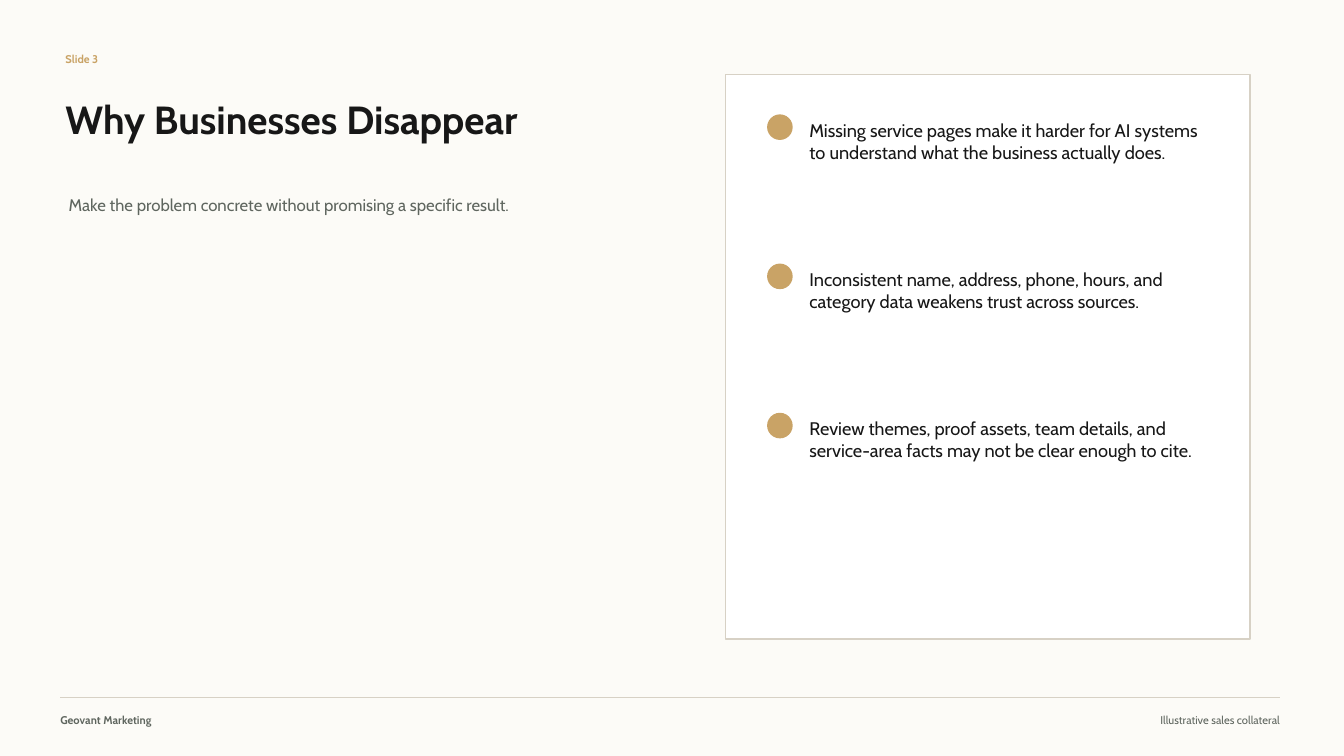
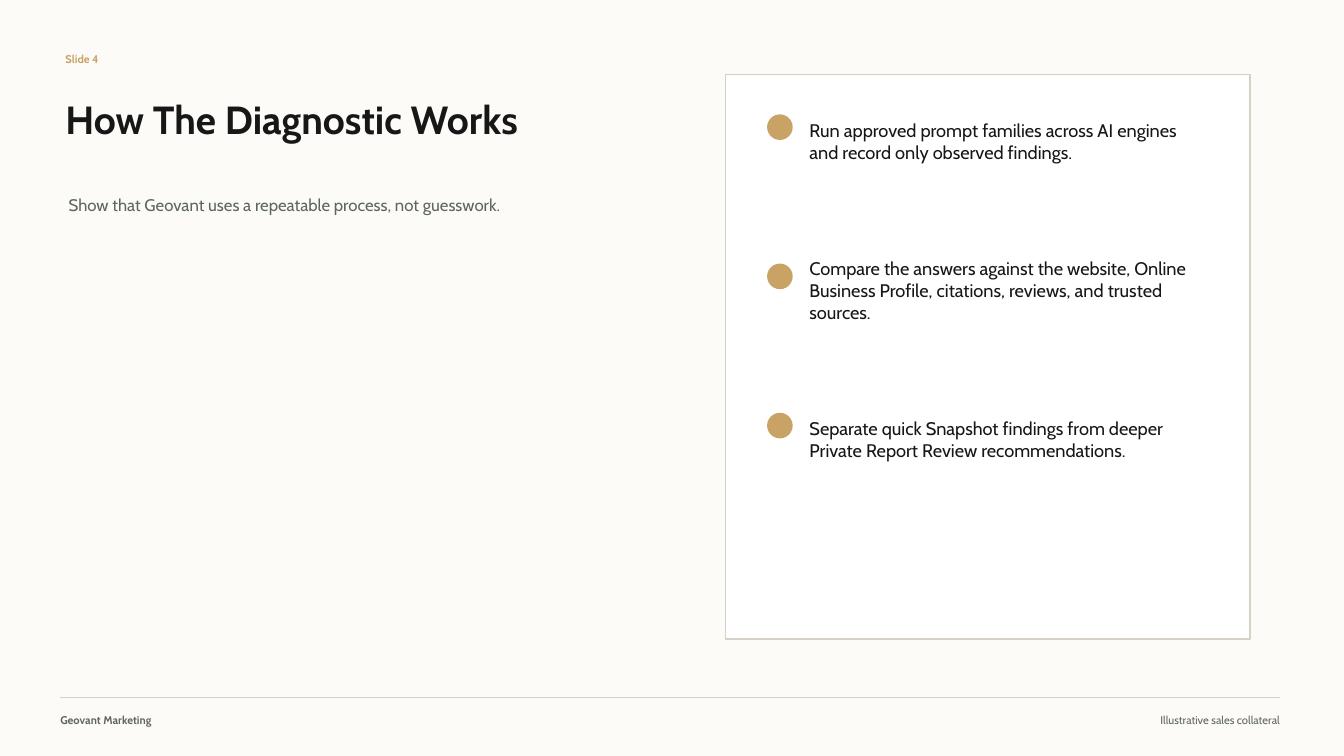
from dataclasses import dataclass
from typing import NamedTuple

from lxml import etree
from pptx import Presentation, util as u
from pptx.dml.color import RGBColor
from pptx.enum import shapes, text
from pptx.oxml import ns


@dataclass(frozen=True)
class Theme:
    font: str = "Cabin"
    paper: str = "FCFBF7"
    card: str = "FFFFFF"
    ink: str = "171717"
    muted: str = "5F665F"
    accent: str = "C9A366"
    rule: str = "D7D1C5"
    title_size: float = 28
    point_size: float = 13
    subtitle_size: float = 12
    small_size: float = 8
    line_width: float = 1


class Box(NamedTuple):
    """Left, top, width and height in centimetres."""
    left: float
    top: float
    width: float
    height: float

    def lengths(self) -> list[u.Length]:
        return [u.Cm(value) for value in self]

    def down(self, distance: float) -> "Box":
        return self._replace(top=self.top + distance)


class TextStyle(NamedTuple):
    size: float
    color: str
    bold: bool = False
    align: text.PP_ALIGN = text.PP_ALIGN.LEFT


@dataclass(frozen=True)
class Page:
    label: str
    title: str
    subtitle: str
    points: tuple[str, ...]


THEME = Theme()

LABEL_STYLE = TextStyle(THEME.small_size, THEME.accent, bold=True)
TITLE_STYLE = TextStyle(THEME.title_size, THEME.ink, bold=True)
SUBTITLE_STYLE = TextStyle(THEME.subtitle_size, THEME.muted)
POINT_STYLE = TextStyle(THEME.point_size, THEME.ink)
FOOTER_STYLE = TextStyle(THEME.small_size, THEME.muted, bold=True)
NOTICE_STYLE = TextStyle(THEME.small_size, THEME.muted, align=text.PP_ALIGN.RIGHT)

SLIDE_WIDTH, SLIDE_HEIGHT = 33.87, 19.05
LABEL_BOX = Box(1.65, 1.22, 3.05, 0.56)
TITLE_BOX = Box(1.65, 2.08, 16.26, 1.83)
SUBTITLE_BOX = Box(1.73, 4.37, 14.99, 1.57)
CARD_BOX = Box(18.29, 1.88, 13.21, 14.22)
DOT_BOX = Box(19.35, 2.9, 0.61, 0.61)
POINT_BOX = Box(20.4, 2.77, 9.78, 1.57)
POINT_STEP = 3.76
RULE_LEFT, RULE_RIGHT, RULE_TOP = 1.52, 32.26, 17.58
FOOTER_BOX = Box(RULE_LEFT, 17.86, 8.64, 0.56)
NOTICE_BOX = Box(24.39, 17.86, 7.87, 0.56)

PAGES = (
    Page(
        "Slide 3",
        "Why Businesses Disappear",
        "Make the problem concrete without promising a specific result.",
        (
            "Missing service pages make it harder for AI systems to understand "
            "what the business actually does.",
            "Inconsistent name, address, phone, hours, and category data weakens "
            "trust across sources.",
            "Review themes, proof assets, team details, and service-area facts "
            "may not be clear enough to cite.",
        ),
    ),
    Page(
        "Slide 4",
        "How The Diagnostic Works",
        "Show that Geovant uses a repeatable process, not guesswork.",
        (
            "Run approved prompt families across AI engines and record only "
            "observed findings.",
            "Compare the answers against the website, Online Business Profile, "
            "citations, reviews, and trusted sources.",
            "Separate quick Snapshot findings from deeper Private Report Review "
            "recommendations.",
        ),
    ),
)


def set_attributes(target, values: dict) -> None:
    for name, value in values.items():
        setattr(target, name, value)


def write(shape, content: str, style: TextStyle) -> None:
    frame = shape.text_frame
    set_attributes(frame, {
        "text": content,
        "word_wrap": True,
        "auto_size": text.MSO_AUTO_SIZE.NONE,
        "vertical_anchor": text.MSO_ANCHOR.MIDDLE,
        "margin_left": 0,
        "margin_top": 0,
        "margin_right": 0,
        "margin_bottom": 0,
    })
    paragraph = frame.paragraphs[0]
    paragraph.alignment = style.align
    font = paragraph.runs[0].font
    set_attributes(font, {
        "name": THEME.font,
        "size": u.Pt(style.size),
        "bold": style.bold,
    })
    font.color.rgb = RGBColor.from_string(style.color)


def add_text(slide, box: Box, content: str, style: TextStyle) -> None:
    write(slide.shapes.add_textbox(*box.lengths()), content, style)


def set_title(slide, content: str) -> None:
    title = slide.shapes.title
    set_attributes(title, dict(zip(Box._fields, TITLE_BOX.lengths())))
    write(title, content, TITLE_STYLE)


def set_line(line, color: str) -> None:
    line.color.rgb = RGBColor.from_string(color)
    line.width = u.Pt(THEME.line_width)


def add_filled_shape(slide, kind: shapes.MSO_SHAPE, box: Box, fill: str, line: str) -> None:
    shape = slide.shapes.add_shape(kind, *box.lengths())
    shape.shadow.inherit = False
    shape.fill.solid()
    shape.fill.fore_color.rgb = RGBColor.from_string(fill)
    set_line(shape.line, line)


def add_points(slide, points: tuple[str, ...]) -> None:
    """Draw the card with its evenly spaced points."""
    add_filled_shape(slide, shapes.MSO_SHAPE.RECTANGLE, CARD_BOX, THEME.card, THEME.rule)
    for index, point in enumerate(points):
        offset = index * POINT_STEP
        add_filled_shape(slide, shapes.MSO_SHAPE.OVAL, DOT_BOX.down(offset),
                         THEME.accent, THEME.accent)
        add_text(slide, POINT_BOX.down(offset), point, POINT_STYLE)


def add_footer(slide) -> None:
    rule = slide.shapes.add_connector(
        shapes.MSO_CONNECTOR.STRAIGHT,
        u.Cm(RULE_LEFT), u.Cm(RULE_TOP), u.Cm(RULE_RIGHT), u.Cm(RULE_TOP))
    set_line(rule.line, THEME.rule)
    etree.SubElement(rule._element.spPr, ns.qn("a:effectLst"))
    add_text(slide, FOOTER_BOX, "Geovant Marketing", FOOTER_STYLE)
    add_text(slide, NOTICE_BOX, "Illustrative sales collateral", NOTICE_STYLE)


def add_page(presentation, page: Page) -> None:
    slide = presentation.slides.add_slide(presentation.slide_layouts.get_by_name("Title Only"))
    set_title(slide, page.title)
    add_text(slide, LABEL_BOX, page.label, LABEL_STYLE)
    add_text(slide, SUBTITLE_BOX, page.subtitle, SUBTITLE_STYLE)
    add_points(slide, page.points)
    add_footer(slide)


def main() -> None:
    presentation = Presentation()
    set_attributes(presentation, {
        "slide_width": u.Cm(SLIDE_WIDTH),
        "slide_height": u.Cm(SLIDE_HEIGHT),
    })
    background = presentation.slide_master.background.fill
    background.solid()
    background.fore_color.rgb = RGBColor.from_string(THEME.paper)
    for page in PAGES:
        add_page(presentation, page)
    presentation.save("out.pptx")


if __name__ == "__main__":
    main()
